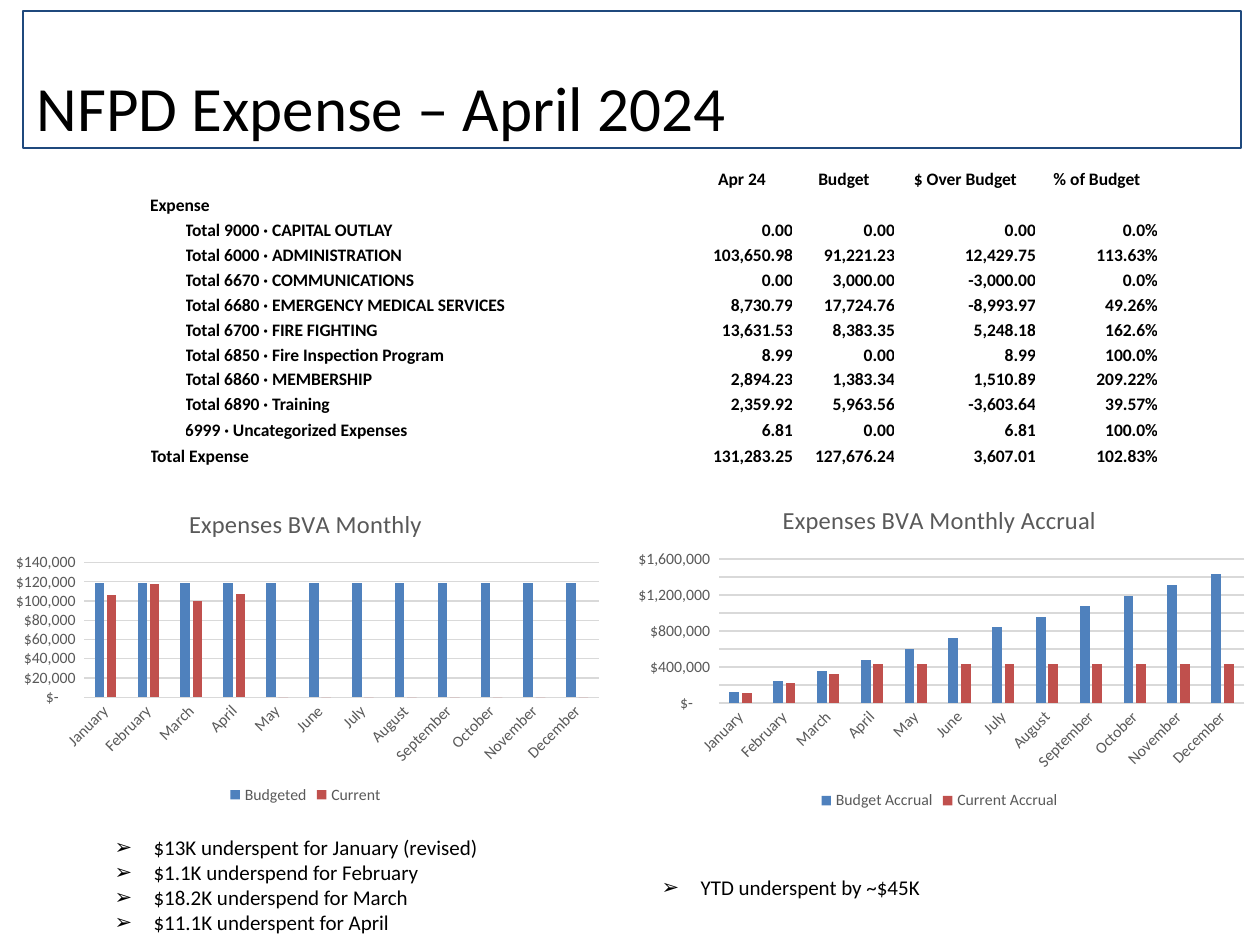
import lxml.etree
import pptx
import pptx.chart.data
import pptx.dml.color
import pptx.enum.chart
import pptx.enum.shapes
import pptx.enum.text
import pptx.oxml.ns
import pptx.util

RGBColor = pptx.dml.color.RGBColor
BLACK = RGBColor(0x00, 0x00, 0x00)
NAVY = RGBColor(0x1F, 0x49, 0x7D)
GRAY = RGBColor(0x59, 0x59, 0x59)
GRID = RGBColor(0xD9, 0xD9, 0xD9)
BLUE = RGBColor(0x4F, 0x81, 0xBD)
RED = RGBColor(0xC0, 0x50, 0x4D)
WHITE = RGBColor(0xFF, 0xFF, 0xFF)

FONT = "Calibri"
EMU_PER_PX = 914400 / 126
qn = pptx.oxml.ns.qn
ALIGN = pptx.enum.text.PP_ALIGN
ANCHOR = pptx.enum.text.MSO_ANCHOR
AUTO = pptx.enum.text.MSO_AUTO_SIZE

MONTHS = ["January", "February", "March", "April", "May", "June", "July",
          "August", "September", "October", "November", "December"]
DOLLARS = '_("$"* #,##0_);_("$"* \\(#,##0\\);_("$"* "-"??_);_(@_)'

HEADINGS = ["Apr 24", "Budget", "$ Over Budget", "% of Budget"]
EXPENSES = [
    ("Total 9000 · CAPITAL OUTLAY", "0.00", "0.00", "0.00", "0.0%"),
    ("Total 6000 · ADMINISTRATION", "103,650.98", "91,221.23", "12,429.75", "113.63%"),
    ("Total 6670 · COMMUNICATIONS", "0.00", "3,000.00", "-3,000.00", "0.0%"),
    ("Total 6680 · EMERGENCY MEDICAL SERVICES", "8,730.79", "17,724.76", "-8,993.97", "49.26%"),
    ("Total 6700 · FIRE FIGHTING", "13,631.53", "8,383.35", "5,248.18", "162.6%"),
    ("Total 6850 · Fire Inspection Program", "8.99", "0.00", "8.99", "100.0%"),
    ("Total 6860 · MEMBERSHIP", "2,894.23", "1,383.34", "1,510.89", "209.22%"),
    ("Total 6890 · Training", "2,359.92", "5,963.56", "-3,603.64", "39.57%"),
    ("6999 · Uncategorized Expenses", "6.81", "0.00", "6.81", "100.0%"),
]
TOTAL = ["131,283.25", "127,676.24", "3,607.01", "102.83%"]


def px(n):
    return pptx.util.Emu(round(n * EMU_PER_PX))


def set_attrs(obj, **values):
    for name, value in values.items():
        setattr(obj, name, value)


def set_font(font, size, color=BLACK, bold=False):
    set_attrs(font, name=FONT, size=pptx.util.Pt(size), bold=bold)
    font.color.rgb = color


def place(sp, left, top, width, height):
    set_attrs(sp, left=px(left), top=px(top), width=px(width), height=px(height))


def add_header_frame(s, *box):
    sp = s.shapes.add_shape(pptx.enum.shapes.MSO_SHAPE.RECTANGLE, *map(px, box))
    sp.shadow.inherit = False
    sp.fill.background()
    sp.line.color.rgb = NAVY
    sp.line.width = pptx.util.Pt(0.75)
    s.shapes._spTree.insert(2, sp._element)  # behind the title


def fill_title(sp, text, *box):
    place(sp, *box)
    tf = sp.text_frame
    set_attrs(tf, vertical_anchor=ANCHOR.MIDDLE, word_wrap=True, auto_size=AUTO.NONE)
    p = tf.paragraphs[0]
    p.alignment = ALIGN.LEFT
    r = p.add_run()
    r.text = text
    set_font(r.font, 36)


def fill_bullets(sp, lines, *box):
    place(sp, *box)
    tf = sp.text_frame
    set_attrs(tf, vertical_anchor=ANCHOR.TOP, word_wrap=True,
              auto_size=AUTO.SHAPE_TO_FIT_TEXT)
    for i, line in enumerate(lines):
        p = tf.paragraphs[0] if i == 0 else tf.add_paragraph()
        pPr = p._p.get_or_add_pPr()
        pPr.set("marL", str(px(39)))
        pPr.set("indent", str(-px(39)))
        lxml.etree.SubElement(pPr, qn("a:buFont")).set("typeface", "Arial")
        lxml.etree.SubElement(pPr, qn("a:buChar")).set("char", "➢")
        p.space_before = pptx.util.Pt(0)
        r = p.add_run()
        r.text = line
        set_font(r.font, 12)


def format_cell(cell):
    set_attrs(cell, margin_left=0, margin_right=0, margin_top=0, margin_bottom=0,
              vertical_anchor=ANCHOR.BOTTOM)
    cell.fill.background()
    tcPr = cell._tc.get_or_add_tcPr()
    for i, side in enumerate(("lnL", "lnR", "lnT", "lnB")):
        ln = lxml.etree.Element(qn(f"a:{side}"), w="12700")
        fill = lxml.etree.SubElement(ln, qn("a:solidFill"))
        lxml.etree.SubElement(fill, qn("a:srgbClr")).set("val", str(WHITE))
        tcPr.insert(i, ln)
    # Keeps empty cells from stretching their row
    cell.text_frame.paragraphs[0]._p.get_or_add_endParaRPr().set("sz", "1000")


def write_cell(cell, text, align):
    p = cell.text_frame.paragraphs[0]
    p.alignment = align
    r = p.add_run()
    r.text = text
    set_font(r.font, 10, bold=True)


def add_expense_table(s, left, top):
    widths = [35] * 5 + [366, 102, 102, 141, 122]
    heights = [26, 26] + [25] * 8 + [26, 26]
    table = s.shapes.add_table(len(heights), len(widths), px(left), px(top),
                               px(sum(widths)), px(sum(heights))).table
    set_attrs(table, first_row=False, horz_banding=False)
    for col, width in zip(table.columns, widths):
        col.width = px(width)
    for row, height in zip(table.rows, heights):
        row.height = px(height)
    for cell in table.iter_cells():
        format_cell(cell)

    # Label, its first and last column, then the four figures
    rows = [("", 0, 0, HEADINGS), ("Expense", 0, 1, [])]
    rows += [(label, 1, 5, figures) for label, *figures in EXPENSES]
    rows += [("Total Expense", 0, 3, TOTAL)]
    for i, (label, first, last, figures) in enumerate(rows):
        if label:
            table.cell(i, first).merge(table.cell(i, last))
            write_cell(table.cell(i, first), label, ALIGN.LEFT)
        for j, figure in enumerate(figures, 6):
            write_cell(table.cell(i, j), figure, ALIGN.RIGHT if i else ALIGN.CENTER)


def add_column_chart(s, title, series, top_value, step, *box):
    data = pptx.chart.data.CategoryChartData()
    data.categories = MONTHS
    for name, values in series:
        data.add_series(name, values)
    chart = s.shapes.add_chart(pptx.enum.chart.XL_CHART_TYPE.COLUMN_CLUSTERED,
                               *map(px, box), data).chart
    set_font(chart.font, 10)
    tf = chart.chart_title.text_frame
    tf.text = title
    set_font(tf.paragraphs[0].runs[0].font, 14, GRAY)
    chart.has_legend = True
    set_attrs(chart.legend, position=pptx.enum.chart.XL_LEGEND_POSITION.BOTTOM,
              include_in_layout=False)
    set_font(chart.legend.font, 9, GRAY)

    # Columns
    plot = chart.plots[0]
    set_attrs(plot, gap_width=219, overlap=-27, vary_by_categories=False)
    for ser, color in zip(plot.series, (BLUE, RED)):
        ser.format.fill.solid()
        ser.format.fill.fore_color.rgb = color

    # Axes
    months, dollars = chart.category_axis, chart.value_axis
    for axis in (months, dollars):
        axis.major_tick_mark = pptx.enum.chart.XL_TICK_MARK.NONE
        set_font(axis.tick_labels.font, 9, GRAY)
    set_attrs(dollars, minimum_scale=0, maximum_scale=top_value, major_unit=step)
    set_attrs(dollars.tick_labels, number_format=DOLLARS, number_format_is_linked=False)
    dollars.format.line.fill.background()
    for line in (months.format.line, dollars.major_gridlines.format.line):
        line.color.rgb = GRID
        line.width = pptx.util.Pt(0.75)
    months._element.find(qn("c:txPr")).find(qn("a:bodyPr")).set("rot", "-2700000")


def main():
    prs = pptx.Presentation()
    set_attrs(prs, slide_width=px(1260), slide_height=px(945))
    s = prs.slides.add_slide(prs.slide_layouts[3])
    title, left_body, right_body = s.placeholders

    # Header
    add_header_frame(s, 23, 11, 1218, 137)
    fill_title(title, "NFPD Expense – April 2024", 24, 66, 1134, 81)

    # Expense table
    add_expense_table(s, 150, 164)

    # Charts
    add_column_chart(s, "Expenses BVA Monthly Accrual", [
        ("Budget Accrual", [120000, 240000, 360000, 480000, 600000, 720000, 840000,
                            960000, 1080000, 1190000, 1310000, 1430000]),
        ("Current Accrual", [110000, 220000, 320000] + [430000] * 9),
    ], 1600000, 200000, 622, 485, 635, 330)
    add_column_chart(s, "Expenses BVA Monthly", [
        ("Budgeted", [119000] * 12),
        ("Current", [106000, 118000, 100000, 107000] + [0] * 8),
    ], 140000, 20000, 0, 489, 611, 320)

    # Remarks
    fill_bullets(left_body, ["$13K underspent for January (revised)",
                             "$1.1K underspend for February",
                             "$18.2K underspend for March",
                             "$11.1K underspent for April"], 102, 828, 1094, 115)
    fill_bullets(right_body, ["YTD underspent by ~$45K"], 649, 868, 440, 38)
    prs.save("out.pptx")


if __name__ == "__main__":
    main()
